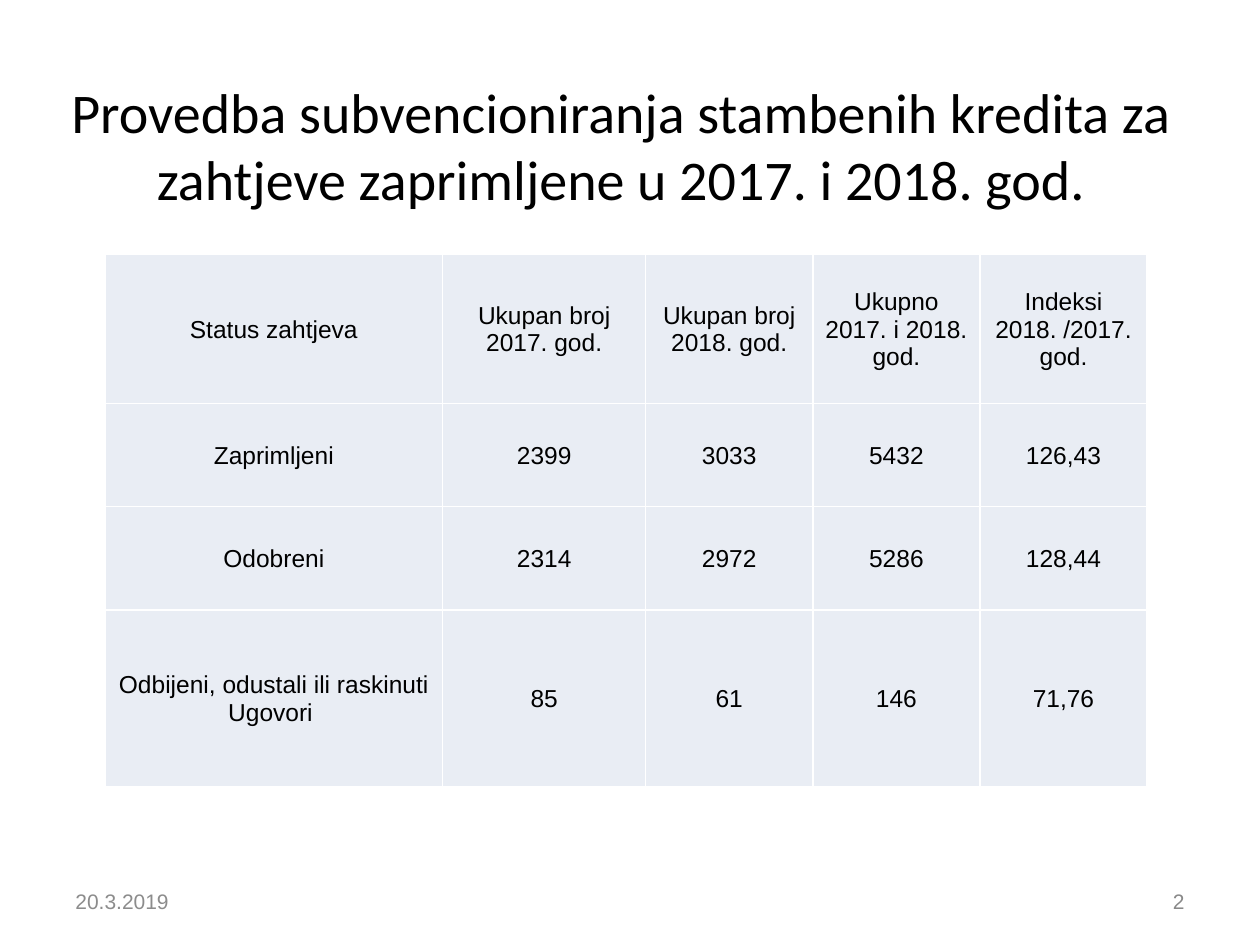
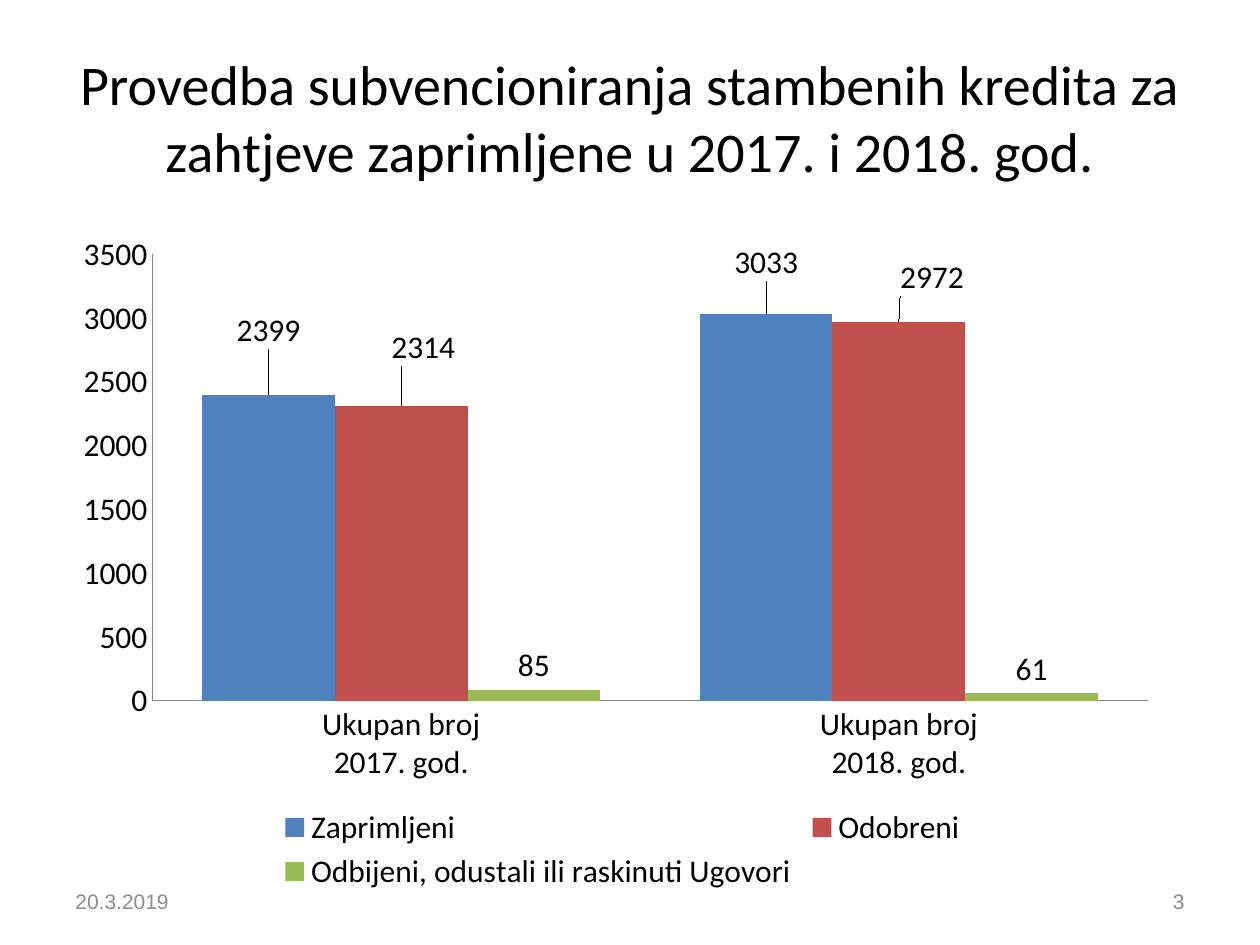
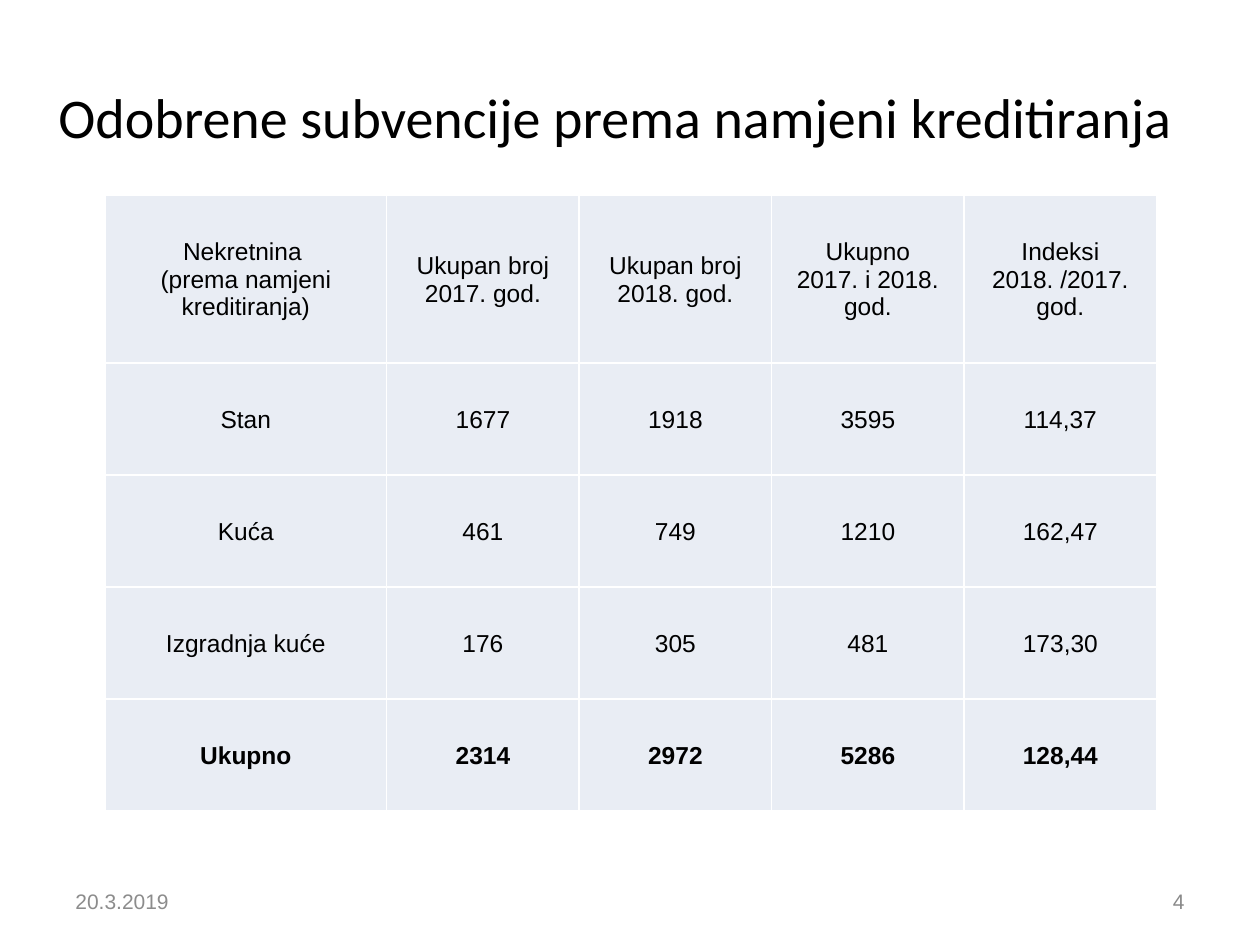
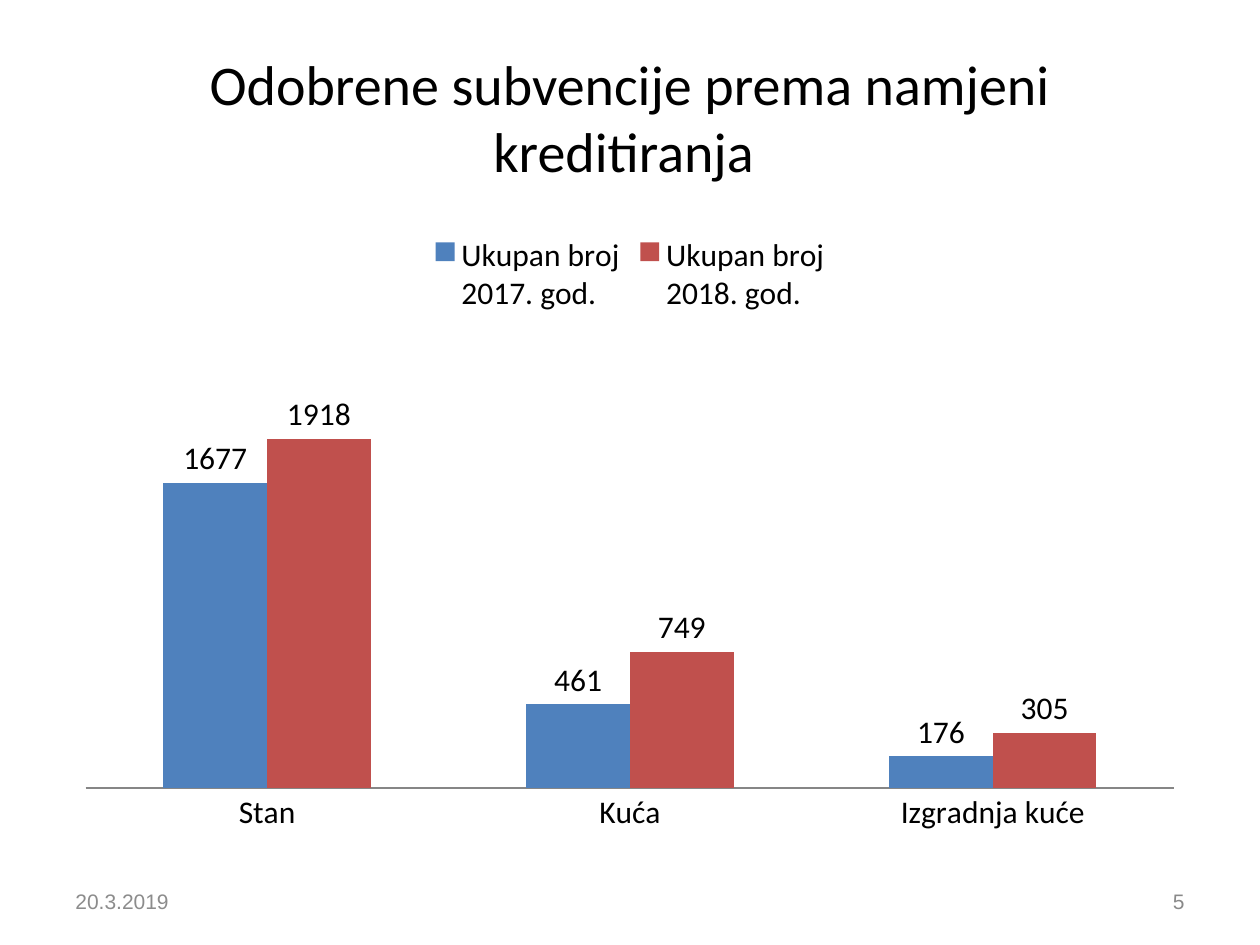
import dataclasses
import typing

import pptx
import pptx.chart.chart
import pptx.chart.data
import pptx.dml.color
import pptx.enum.chart
import pptx.enum.text
import pptx.oxml
import pptx.oxml.ns
import pptx.slide
import pptx.text.text
import pptx.util

Pt = pptx.util.Pt
Align = pptx.enum.text.PP_ALIGN
Anchor = pptx.enum.text.MSO_ANCHOR
Legend = pptx.enum.chart.XL_LEGEND_POSITION
Outside = pptx.enum.chart.XL_LABEL_POSITION.OUTSIDE_END
Tick = pptx.enum.chart.XL_TICK_MARK

BLACK, WHITE, PALE, AXIS = "000000", "FFFFFF", "E9EDF4", "868686"
HUES = ["4F81BD", "C0504D", "9BBB59"]
HEAD, BODY = "Calibri", "Arial"
DATE = "20.3.2019"
FIRST = 2

STATUS = "Provedba subvencioniranja stambenih kredita za zahtjeve zaprimljene u 2017. i 2018. god."
PURPOSE = "Odobrene subvencije prema namjeni kreditiranja"
YEARS = ["Ukupan broj\n2017. god.", "Ukupan broj\n2018. god."]
TOTALS = YEARS + ["Ukupno\n2017. i 2018. god.", "Indeksi\n2018. /2017. god."]


class Box(typing.NamedTuple):
    left: float
    top: float
    width: float
    height: float

    def points(self) -> list[int]:
        return [Pt(side) for side in self]


@dataclasses.dataclass
class Grid:
    box: Box
    cols: list[float]
    rows: list[float]
    cells: list[list[str]]
    total: bool = False


@dataclasses.dataclass
class Graph:
    box: Box
    cats: list[str]
    series: dict[str, list[int]]
    plot: Box
    gap: int
    top: int
    legend: typing.Any
    key: Box | None = None
    scale: bool = True
    shifts: dict[tuple[int, int], tuple[float, float]] = dataclasses.field(default_factory=dict)


@dataclasses.dataclass
class Page:
    title: str
    box: Box
    item: Grid | Graph


def color(code: str) -> pptx.dml.color.RGBColor:
    return pptx.dml.color.RGBColor.from_string(code)


def style(font: pptx.text.text.Font, name: str, size: float, code: str = BLACK) -> None:
    font.name = name
    font.size = Pt(size)
    font.color.rgb = color(code)


def head(slide: pptx.slide.Slide, page: Page) -> None:
    title = slide.shapes.title
    title.left, title.top, title.width, title.height = page.box.points()
    frame = title.text_frame
    frame.auto_size = pptx.enum.text.MSO_AUTO_SIZE.NONE
    frame.vertical_anchor = Anchor.MIDDLE
    line = frame.paragraphs[0]
    line.text = page.title
    line.alignment = Align.CENTER
    style(line.font, HEAD, 32)


def note(slide: pptx.slide.Slide, text: str, left: float, code: str, align: typing.Any) -> None:
    frame = slide.shapes.add_textbox(*Box(left, 500.5, 168, 28.75).points()).text_frame
    frame.word_wrap = True
    frame.vertical_anchor = Anchor.MIDDLE
    line = frame.paragraphs[0]
    line.text = text
    line.alignment = align
    style(line.font, BODY, 12, code)


def border(side: str) -> typing.Any:
    return pptx.oxml.parse_xml(
        f'<a:{side} {pptx.oxml.ns.nsdecls("a")} w="{Pt(1)}"><a:solidFill>'
        f'<a:srgbClr val="{WHITE}"/></a:solidFill></a:{side}>'
    )


def table(slide: pptx.slide.Slide, grid: Grid) -> None:
    shape = slide.shapes.add_table(len(grid.rows), len(grid.cols), *grid.box.points())
    tab = shape.table
    tab.first_row = tab.horz_banding = False
    for col, width in zip(tab.columns, grid.cols):
        col.width = Pt(width)
    for row, height in zip(tab.rows, grid.rows):
        row.height = Pt(height)
    for r, texts in enumerate(grid.cells):
        for c, text in enumerate(texts):
            cell = tab.cell(r, c)
            cell.margin_left = cell.margin_right = cell.margin_top = Pt(0.75)
            cell.margin_bottom = 0
            cell.vertical_anchor = Anchor.MIDDLE
            cell.fill.solid()
            cell.fill.fore_color.rgb = color(PALE)
            line = cell.text_frame.paragraphs[0]
            line.text = text
            line.alignment = Align.CENTER
            style(line.font, BODY, 14)
            if grid.total and r == len(grid.rows) - 1:
                line.font.bold = True
    for props in shape.element.iter(pptx.oxml.ns.qn("a:tcPr")):
        for spot, side in enumerate(["lnL", "lnR", "lnT", "lnB"]):
            props.insert(spot, border(side))


def place(node: typing.Any, spot: int, parts: dict[str, typing.Any]) -> None:
    for old in node.findall(pptx.oxml.ns.qn("c:layout")):
        node.remove(old)
    inner = "".join(f'<c:{tag} val="{val}"/>' for tag, val in parts.items())
    node.insert(spot, pptx.oxml.parse_xml(
        f'<c:layout {pptx.oxml.ns.nsdecls("c")}><c:manualLayout>{inner}</c:manualLayout></c:layout>'
    ))


def area(box: Box) -> dict[str, typing.Any]:
    return {"xMode": "edge", "yMode": "edge", **dict(zip("xywh", box))}


def axes(chart: pptx.chart.chart.Chart, graph: Graph) -> None:
    for axis in (chart.category_axis, chart.value_axis):
        axis.has_major_gridlines = False
        axis.major_tick_mark = axis.minor_tick_mark = Tick.NONE
        axis.format.line.color.rgb = color(AXIS)
        axis.format.line.width = Pt(0.75)
    chart.value_axis.minimum_scale = 0
    chart.value_axis.maximum_scale = graph.top
    chart.value_axis.major_unit = 500
    chart.value_axis.visible = graph.scale


def draw(slide: pptx.slide.Slide, graph: Graph) -> None:
    data = pptx.chart.data.CategoryChartData()
    data.categories = graph.cats
    for name, vals in graph.series.items():
        data.add_series(name, vals)
    kind = pptx.enum.chart.XL_CHART_TYPE.COLUMN_CLUSTERED
    chart = slide.shapes.add_chart(kind, *graph.box.points(), data).chart
    chart.has_title = False
    style(chart.font, HEAD, 18)
    axes(chart, graph)
    plot = chart.plots[0]
    plot.vary_by_categories = False
    plot.gap_width = graph.gap
    plot.overlap = 0
    for series, hue in zip(plot.series, HUES):
        series.format.fill.solid()
        series.format.fill.fore_color.rgb = color(hue)
        series.data_labels.show_value = True
        series.data_labels.position = Outside
    for (s, p), (x, y) in graph.shifts.items():
        plot.series[s].points[p].data_label.position = Outside
        label = chart.element.xpath(f".//c:ser[c:idx/@val={s}]//c:dLbl[c:idx/@val={p}]")[0]
        place(label, 1, {"x": x, "y": y})
    chart.has_legend = True
    chart.legend.position = graph.legend
    chart.legend.include_in_layout = False
    place(chart.element.xpath(".//c:plotArea")[0], 0, {"layoutTarget": "inner", **area(graph.plot)})
    if graph.key:
        place(chart.element.xpath(".//c:legend")[0], 1, area(graph.key))


PAGES = [
    Page(STATUS, Box(31, 37.5, 648, 90), Grid(
        Box(60, 145.5, 595.5, 304),
        [193, 116] + [95.5] * 3,
        [85, 59, 59, 101],
        [
            ["Status zahtjeva"] + TOTALS,
            ["Zaprimljeni", "2399", "3033", "5432", "126,43"],
            ["Odobreni", "2314", "2972", "5286", "128,44"],
            ["Odbijeni, odustali ili raskinuti Ugovori ", "85", "61", "146", "71,76"],
        ],
    )),
    Page(STATUS, Box(36, 21.5, 648, 90), Graph(
        Box(36.5, 126, 632, 386.5),
        YEARS,
        {
            "Zaprimljeni": [2399, 3033],
            "Odobreni": [2314, 2972],
            "Odbijeni, odustali ili raskinuti Ugovori": [85, 61],
        },
        Box(0.08, 0.05, 0.9, 0.66),
        gap=75,
        top=3500,
        legend=Legend.BOTTOM,
        key=Box(0.19, 0.86, 0.63, 0.14),
        shifts={(0, 0): (0, -0.06), (0, 1): (0, -0.04), (1, 0): (0.02, -0.05), (1, 1): (0.03, -0.03)},
    )),
    Page(PURPOSE, Box(19.5, 21.5, 664.5, 90), Grid(
        Box(60, 111.5, 601, 352),
        [161] + [110] * 4,
        [96] + [64] * 4,
        [
            ["Nekretnina \n(prema namjeni kreditiranja)"] + TOTALS,
            ["Stan", "1677", "1918", "3595", "114,37"],
            ["Kuća", "461", "749", "1210", "162,47"],
            ["Izgradnja kuće", "176", "305", "481", "173,30"],
            ["Ukupno", "2314", "2972", "5286", "128,44"],
        ],
        total=True,
    )),
    Page(PURPOSE + " ", Box(36, 21.5, 648, 90), Graph(
        Box(36, 126, 648, 356.5),
        ["Stan", "Kuća", "Izgradnja kuće"],
        dict(zip(YEARS, [[1677, 461, 176], [1918, 749, 305]])),
        Box(0.02, 0.18, 0.96, 0.73),
        gap=150,
        top=2500,
        legend=Legend.TOP,
        scale=False,
    )),
]


def main() -> None:
    deck = pptx.Presentation()
    deck.slide_width, deck.slide_height = Pt(720), Pt(540)
    for number, page in enumerate(PAGES, FIRST):
        slide = deck.slides.add_slide(deck.slide_layouts[5])
        head(slide, page)
        if isinstance(page.item, Grid):
            table(slide, page.item)
        else:
            draw(slide, page.item)
        note(slide, DATE, 36, "8C8C8C", Align.LEFT)
        note(slide, str(number), 516, "898989", Align.RIGHT)
    deck.save("out.pptx")


if __name__ == "__main__":
    main()
